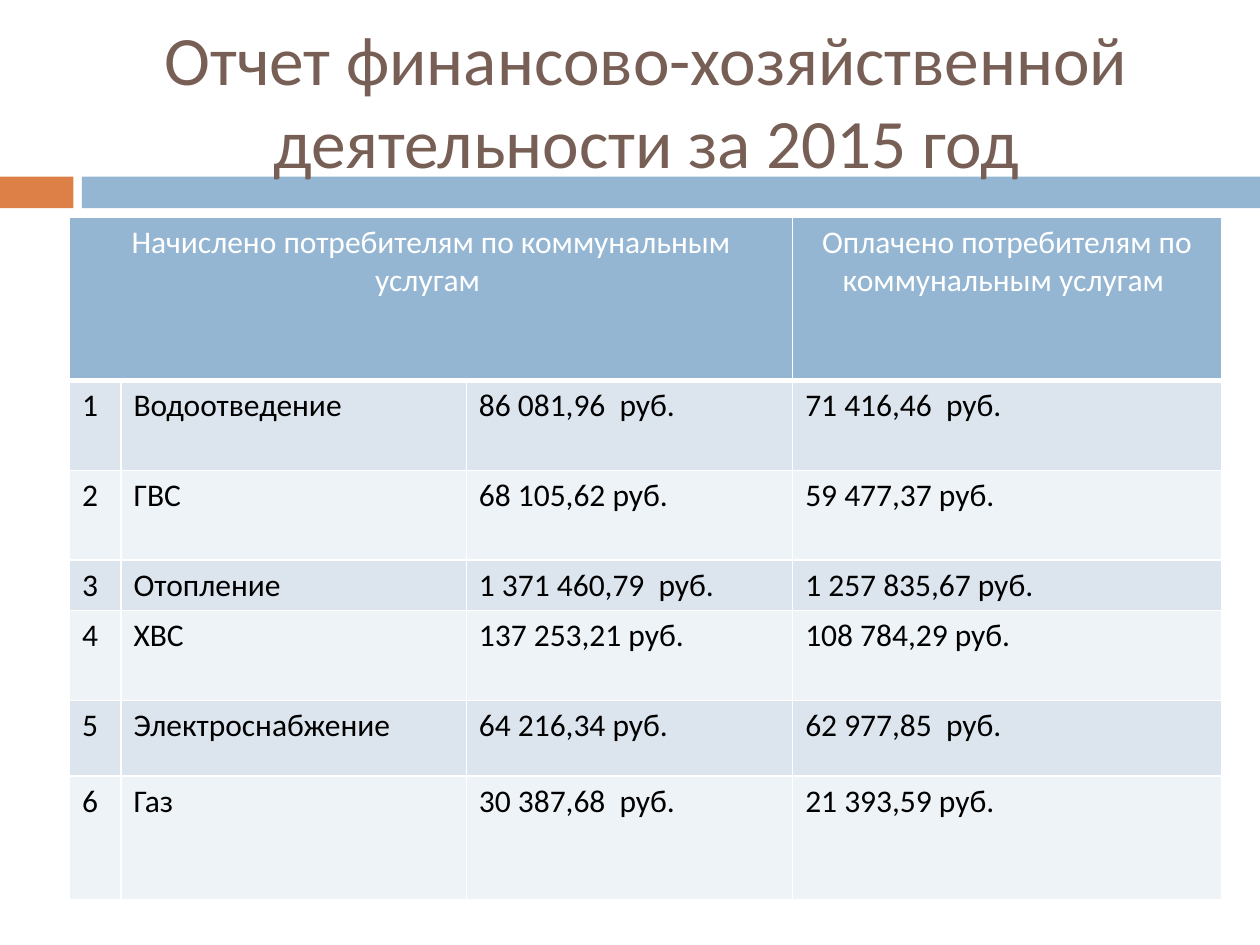
from dataclasses import dataclass
from lxml import etree
from pptx import Presentation
from pptx.dml.color import RGBColor
from pptx.enum.shapes import MSO_SHAPE
from pptx.enum.text import MSO_ANCHOR, PP_ALIGN
from pptx.oxml.ns import qn
from pptx.util import Cm, Pt

RECT = MSO_SHAPE.RECTANGLE
MIDDLE = MSO_ANCHOR.MIDDLE
LEFT, CENTER = PP_ALIGN.LEFT, PP_ALIGN.CENTER
FONT = "Calibri"
COLORS = {
    "orange": "DD8047", "blue": "94B6D2", "brown": "775F55", "white": "FFFFFF",
    "black": "000000", "odd": "DCE5EE", "even": "EEF3F7",
}
TITLE = "Отчет финансово-хозяйственной деятельности за 2015 год"
WIDTHS = (1.04, 6.96, 6.58, 8.64)
HEIGHTS = (3.3, 1.81, 1.81, 1.02, 1.81, 1.52, 2.5)


@dataclass
class Bar:
    left: float
    width: float
    color: str


@dataclass
class Entry:
    name: str
    billed: str
    paid: str


BARS = (Bar(0, 1.48, "orange"), Bar(1.65, 23.75, "blue"))
HEADS = {0: "Начислено потребителям по коммунальным услугам ",
         3: "Оплачено потребителям по коммунальным услугам "}
ENTRIES = (
    Entry("Водоотведение", "86 081,96  руб.", "71 416,46  руб."),
    Entry("ГВС", "68 105,62 руб.", "59 477,37 руб."),
    Entry("Отопление", "1 371 460,79  руб.", "1 257 835,67 руб."),
    Entry("ХВС", "137 253,21 руб.", "108 784,29 руб."),
    Entry("Электроснабжение", "64 216,34 руб.", "62 977,85  руб."),
    Entry("Газ", "30 387,68  руб.", "21 393,59 руб."),
)


def rgb(name: str) -> RGBColor:
    return RGBColor.from_string(COLORS[name])


def write(frame, text: str, size: float, color: str, align) -> None:
    para = frame.paragraphs[0]
    para.alignment = align
    run = para.add_run()
    run.text = text
    run.font.name = FONT
    run.font.size = Pt(size)
    run.font.color.rgb = rgb(color)


def draw_bar(slide, bar: Bar) -> None:
    shape = slide.shapes.add_shape(RECT, Cm(bar.left), Cm(3.56), Cm(bar.width), Cm(0.64))
    shape.shadow.inherit = False
    shape.fill.solid()
    shape.fill.fore_color.rgb = rgb(bar.color)
    shape.line.fill.background()


def draw_title(slide) -> None:
    box = slide.shapes.add_textbox(Cm(1.7), Cm(0.64), Cm(22.66), Cm(2.74))
    box.text_frame.word_wrap = True
    box.text_frame.vertical_anchor = MIDDLE
    write(box.text_frame, TITLE, 39.6, "brown", CENTER)


def style_cell(cell, color: str, bottom: float) -> None:
    cell.fill.solid()
    cell.fill.fore_color.rgb = rgb(color)
    props = cell._tc.get_or_add_tcPr()
    for index, (side, width) in enumerate(zip("LRTB", (1, 1, 1, bottom))):
        line = etree.Element(qn(f"a:ln{side}"), w=str(Pt(width)))
        fill = etree.SubElement(line, qn("a:solidFill"))
        etree.SubElement(fill, qn("a:srgbClr"), val=COLORS["white"])
        props.insert(index, line)


def draw_table(slide) -> None:
    table = slide.shapes.add_table(
        len(HEIGHTS), len(WIDTHS), Cm(1.4), Cm(4.37), Cm(sum(WIDTHS)), Cm(sum(HEIGHTS))
    ).table
    for column, width in zip(table.columns, WIDTHS):
        column.width = Cm(width)
    for row, height in zip(table.rows, HEIGHTS):
        row.height = Cm(height)
    table.cell(0, 0).merge(table.cell(0, 2))
    for cell in table.rows[0].cells:
        style_cell(cell, "blue", 3)
    for col, text in HEADS.items():
        write(table.cell(0, col).text_frame, text, 18, "white", CENTER)
    for num, entry in enumerate(ENTRIES, 1):
        texts = (str(num), entry.name, entry.billed, entry.paid)
        for cell, text in zip(table.rows[num].cells, texts):
            style_cell(cell, "odd" if num % 2 else "even", 1)
            write(cell.text_frame, text, 18, "black", LEFT)


def main() -> None:
    """Build the slide with the utility payments report."""
    deck = Presentation()
    deck.slide_width, deck.slide_height = Cm(25.4), Cm(19.05)
    slide = deck.slides.add_slide(deck.slide_layouts[6])
    for bar in BARS:
        draw_bar(slide, bar)
    draw_title(slide)
    draw_table(slide)
    deck.save("out.pptx")


if __name__ == "__main__":
    main()
